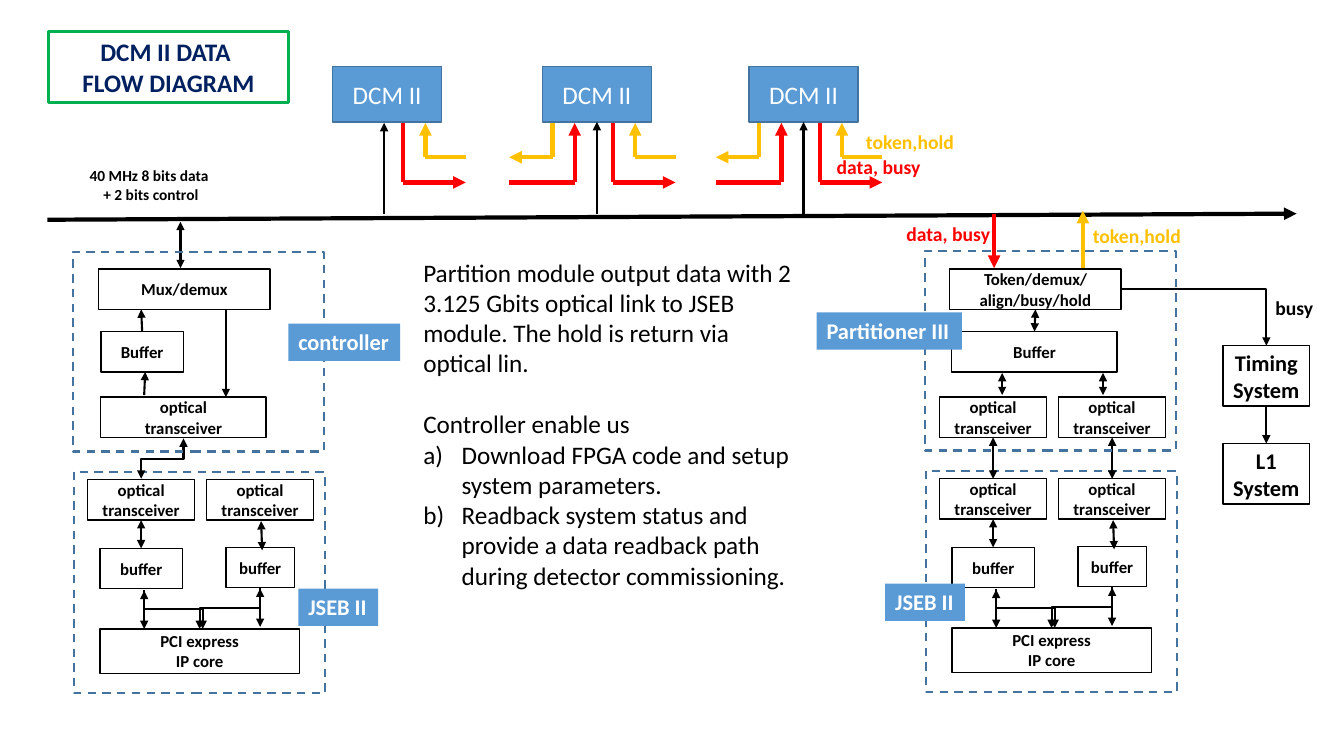
from lxml import etree
from pptx import Presentation
from pptx.dml.color import RGBColor
from pptx.enum import dml, shapes, text
from pptx.oxml import ns
from pptx.util import Inches, Pt

BLACK = RGBColor(0, 0, 0)
WHITE = RGBColor(255, 255, 255)
BLUE = RGBColor(0x5B, 0x9B, 0xD5)
EDGE = RGBColor(0x43, 0x73, 0x9E)
NAVY = RGBColor(0, 0x20, 0x60)
GREEN = RGBColor(0, 0xB0, 0x50)
TOKEN = RGBColor(0xFF, 0xC0, 0)
DATA = RGBColor(255, 0, 0)
CENTER = text.PP_ALIGN.CENTER
BOTTOM, TOP = 2, 0
RAIL = 2.12
TRANSCEIVER = "optical\ntransceiver"


def write(shape, words, size, color, bold=True, align=None, wrap=True):
    frame = shape.text_frame
    frame.text = words
    frame.word_wrap = wrap
    for para in frame.paragraphs:
        para.alignment = align
        for span in para.runs:
            font = span.font
            font.name, font.size, font.bold = "Calibri", Pt(size), bold
            font.color.rgb = color
    return frame


def rectangle(slide, left, top, width, height, fill=None, edge=None, weight=1):
    box = slide.shapes.add_shape(shapes.MSO_SHAPE.RECTANGLE, Inches(left), Inches(top),
                                 Inches(width), Inches(height))
    box.shadow.inherit = False
    if fill is None:
        box.fill.background()
    else:
        box.fill.solid()
        box.fill.fore_color.rgb = fill
    if edge is None:
        box.line.fill.background()
    else:
        box.line.color.rgb = edge
        box.line.width = Pt(weight)
    return box


def block(slide, words, left, top, width, height=0.4, size=12):
    box = rectangle(slide, left, top, width, height, WHITE, BLACK)
    write(box, words, size, BLACK, align=CENTER)
    return box


def dashed(slide, left, top, width, height):
    box = rectangle(slide, left, top, width, height, edge=EDGE, weight=1.5)
    box.line.dash_style = dml.MSO_LINE.DASH


def tag(slide, words, left, top, width):
    box = rectangle(slide, left, top, width, 0.37, BLUE)
    frame = write(box, words, 16, WHITE, align=text.PP_ALIGN.LEFT, wrap=False)
    frame.vertical_anchor = text.MSO_ANCHOR.TOP


def caption(slide, words, left, top, width, height=0.34, size=14, color=BLACK,
            bold=True, align=None, wrap=False):
    box = slide.shapes.add_textbox(Inches(left), Inches(top), Inches(width), Inches(height))
    frame = write(box, words, size, color, bold, align, wrap)
    frame.auto_size = text.MSO_AUTO_SIZE.SHAPE_TO_FIT_TEXT
    return frame


def wire(slide, x1, y1, x2, y2, color=BLACK, weight=1.5, ends="tail",
         kind=shapes.MSO_CONNECTOR.STRAIGHT):
    line = slide.shapes.add_connector(kind, Inches(x1), Inches(y1), Inches(x2), Inches(y2))
    line.line.color.rgb = color
    line.line.width = Pt(weight)
    properties = line._element.spPr
    outline = properties.find(ns.qn("a:ln"))
    for end in ends.split():
        etree.SubElement(outline, ns.qn(f"a:{end}End"), type="triangle")
    etree.SubElement(properties, ns.qn("a:effectLst"))
    return line


def link(slide, upper, lower, ends="head tail"):
    line = wire(slide, 0, 0, 1, 1, ends=ends)
    line.begin_connect(upper, BOTTOM)
    line.end_connect(lower, TOP)


def drop_elbow(slide, x1, y1, x2, y2, ends="tail"):
    fall, run = y2 - y1, abs(x2 - x1)
    left, top = (x1 + x2 - fall) / 2, (y1 + y2 - run) / 2
    line = wire(slide, left, top, left + fall, top + run, ends=ends,
                kind=shapes.MSO_CONNECTOR.ELBOW)
    frame = line._element.spPr.find(ns.qn("a:xfrm"))
    frame.set("rot", str((270 if x2 > x1 else 90) * 60000))
    if x2 > x1:
        frame.set("flipH", "1")


def dcm(slide, left, top, tap=0.54, has_left=True):
    box = rectangle(slide, left, top, 1.08, 0.55, BLUE, EDGE)
    write(box, "DCM II", 18, WHITE, False, CENTER)
    base, token_y, data_y = top + 0.56, top + 0.9, top + 1.15

    def lane(x, end_x, y, color, into_box):
        wire(slide, x, base, x, y, color, 3, "head" if into_box else "")
        wire(slide, x, y, end_x, y, color, 3, "" if into_box else "tail")

    lane(left + 0.92, left + 1.32, token_y, TOKEN, True)
    lane(left + 0.7, left + 1.32, data_y, DATA, False)
    feed = wire(slide, left + tap, RAIL, left + tap, base)
    if has_left:
        lane(left + 0.1, left - 0.33, token_y, TOKEN, False)
        lane(left + 0.32, left - 0.33, data_y, DATA, True)
        feed.end_connect(box, BOTTOM)


def jseb(slide, left, top, tag_x, tag_y):
    ports = [block(slide, TRANSCEIVER, left + x, top + 0.08, 1.06) for x in (0.14, 1.32)]
    buffers = [block(slide, "buffer", left + x, top + y, width)
               for x, y, width in ((0.26, 0.76, 0.82), (1.51, 0.75, 0.68))]
    core = rectangle(slide, left + 0.26, top + 1.56, 1.98, 0.44, edge=BLACK)
    write(core, "PCI express\nIP core", 12, BLACK, align=CENTER)
    link(slide, ports[0], buffers[0])
    wire(slide, left + 1.86, top + 0.49, left + 1.87, top + 0.78, ends="head tail")
    for x, y, core_x in ((0.7, 1.18, 1.28), (1.85, 1.16, 1.25)):
        wire(slide, left + x, top + y, left + x, top + y + 0.38, ends="head tail")
        drop_elbow(slide, left + x, top + y - 0.01, left + core_x, top + 1.56)
    dashed(slide, left, top, 2.49, 2.2)
    tag(slide, "JSEB II", left + tag_x, top + tag_y, 0.79)
    return ports


def controller(slide, left, top):
    block(slide, "Mux/demux", left + 0.26, top + 0.17, 1.7)
    block(slide, "Buffer", left + 0.28, top + 0.79, 0.82)
    block(slide, TRANSCEIVER, left + 0.28, top + 1.44, 1.64)
    wire(slide, left + 1.07, top + 0.16, left + 1.07, top - 0.3, ends="head tail")
    wire(slide, left + 0.69, top + 0.79, left + 0.68, top + 0.57)
    wire(slide, left + 0.71, top + 1.42, left + 0.72, top + 1.19)
    wire(slide, left + 1.52, top + 0.57, left + 1.52, top + 1.44)
    drop_elbow(slide, left + 1.1, top + 1.85, left + 0.68, top + 2.25, "head tail")
    dashed(slide, left, top, 2.49, 1.98)
    tag(slide, "controller", left + 2.14, top + 0.71, 1.11)


def partitioner(slide, left, top, jseb_ports):
    token = block(slide, "Token/demux/align/busy/hold", left + 0.25, top + 0.18, 1.7)
    buffer = block(slide, "Buffer", left + 0.27, top + 0.8, 1.64)
    link(slide, token, buffer)
    for x, arrow_x, port in zip((0.15, 1.33), (0.77, 1.77), jseb_ports):
        link(slide, block(slide, TRANSCEIVER, left + x, top + 1.45, 1.06), port)
        wire(slide, left + arrow_x, top + 1.21, left + arrow_x, top + 1.43, ends="head tail")
    wire(slide, left + 0.69, RAIL, left + 0.69, top + 0.17, DATA, 3)
    wire(slide, left + 1.57, RAIL - 0.03, left + 1.57, top + 0.17, TOKEN, 3, "head")
    caption(slide, "data, busy", left - 0.28, top - 0.34, 1.08, color=DATA)
    caption(slide, "token,hold", left + 1.57, top - 0.32, 1.08, color=TOKEN)
    dashed(slide, left, top, 2.49, 1.98)
    tag(slide, "Partitioner III", left - 1.07, top + 0.61, 1.44)


def timing(slide, left, top):
    system = block(slide, "Timing\nSystem", left, top, 0.86, 0.6, 16)
    level_one = block(slide, "L1 System", left, top + 0.97, 0.86, 0.6, 16)
    link(slide, system, level_one, "tail")
    busy = wire(slide, left - 1.01, top - 0.56, left + 0.43, top,
                kind=shapes.MSO_CONNECTOR.ELBOW)
    busy._element.spPr.find(ns.qn("a:prstGeom")).set("prst", "bentConnector2")
    caption(slide, "busy", left + 0.42, top - 0.54, 0.58)


def explanation(slide, left, top):
    words = ("Partition module output data with 2 3.125 Gbits optical link to JSEB module. "
             "The hold is return via optical lin.\n"
             "Controller enable us\n"
             "Download FPGA code and setup system parameters.\n"
             "Readback system status and provide a data readback path "
             "during detector commissioning.")
    frame = caption(slide, words, left, top, 3.86, 3.74, 18, bold=False, wrap=True)
    frame.paragraphs[1].space_before = Pt(22)
    for para in frame.paragraphs[2:]:
        properties = para._p.get_or_add_pPr()
        properties.set("marL", str(Inches(0.38)))
        properties.set("indent", str(-Inches(0.38)))
        etree.SubElement(properties, ns.qn("a:buFont"), typeface="+mj-lt")
        etree.SubElement(properties, ns.qn("a:buAutoNum"), type="alphaLcParenR")


def main():
    deck = Presentation()
    deck.slide_width, deck.slide_height = Inches(13.33), Inches(7.5)
    slide = deck.slides.add_slide(deck.slide_layouts[6])
    title = rectangle(slide, 0.48, 0.31, 2.38, 0.71, edge=GREEN, weight=2)
    write(title, "DCM II DATA \nFLOW DIAGRAM", 18, NAVY, align=CENTER)
    wire(slide, 0.47, 2.18, 12.86, RAIL, weight=3)
    dcm(slide, 3.3, 0.66, 0.51, False)
    for left in (5.38, 7.43):
        dcm(slide, left, 0.66)
    caption(slide, "token,hold", 8.49, 1.24, 1.08, color=TOKEN)
    caption(slide, "data, busy", 8.2, 1.49, 1.08, color=DATA)
    caption(slide, "40 MHz 8 bits data\n + 2 bits control", 0.78, 1.6, 1.4, 0.47, 11,
            align=CENTER)
    jseb(slide, 0.73, 4.68, 2.23, 1.16)
    controller(slide, 0.72, 2.5)
    ports = jseb(slide, 9.18, 4.67, -0.4, 1.12)
    partitioner(slide, 9.17, 2.49, ports)
    timing(slide, 12.13, 3.43)
    explanation(slide, 4.1, 2.5)
    deck.save("out.pptx")


if __name__ == "__main__":
    main()
